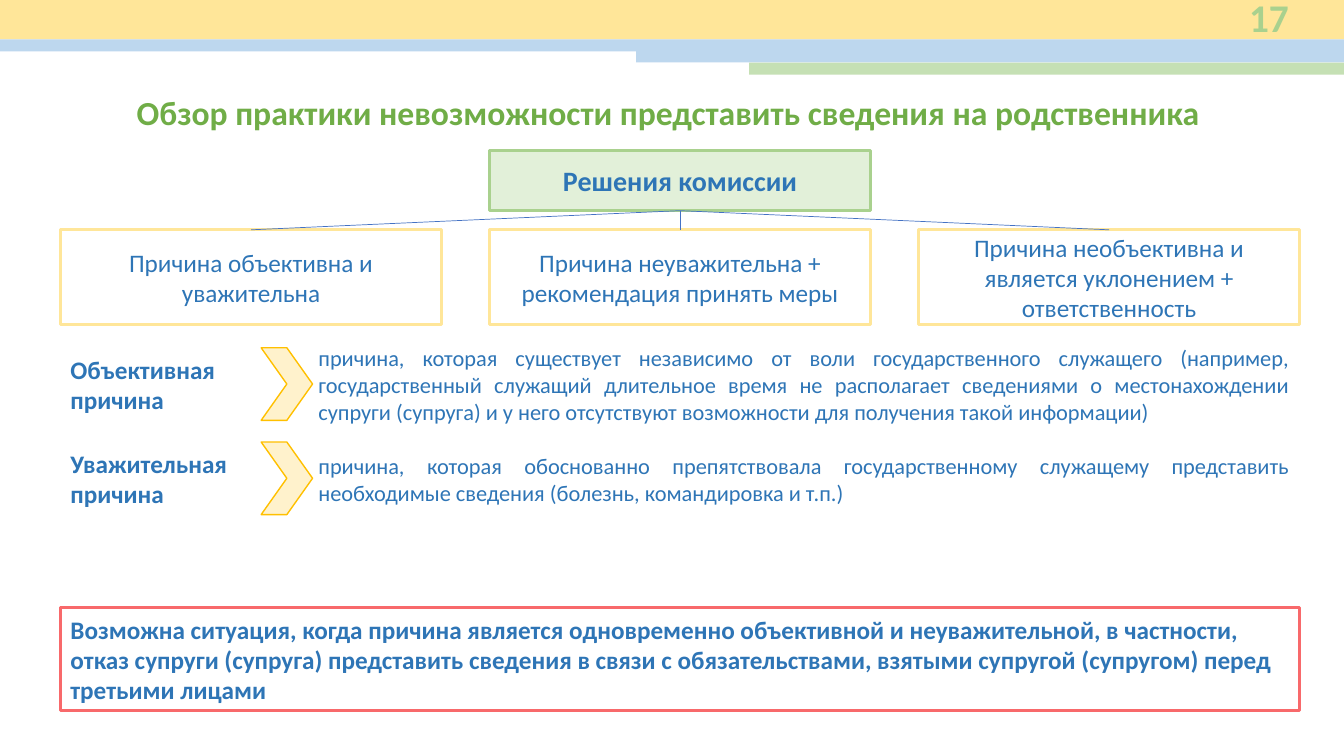
from lxml import etree
from pptx import Presentation
from pptx.dml.color import RGBColor
from pptx.enum.shapes import MSO_CONNECTOR, MSO_SHAPE
from pptx.enum.text import MSO_ANCHOR, PP_ALIGN
from pptx.oxml.ns import qn
from pptx.util import Inches, Pt

RECTANGLE, CHEVRON = MSO_SHAPE.RECTANGLE, MSO_SHAPE.CHEVRON
STRAIGHT = MSO_CONNECTOR.STRAIGHT
LEFT, CENTER, RIGHT, JUSTIFY = PP_ALIGN.LEFT, PP_ALIGN.CENTER, PP_ALIGN.RIGHT, PP_ALIGN.JUSTIFY
TOP, MIDDLE = MSO_ANCHOR.TOP, MSO_ANCHOR.MIDDLE

COLORS = {
    "text": "2E75B6", "title": "70AD47", "number": "A9D18E",
    "yellow": "FFE699", "blue": "BDD7EE", "green": "C5E0B4",
    "pale_green": "E2F0D9", "green_border": "A9D18E", "white": "FFFFFF",
    "pale_yellow": "FFF2CC", "gold": "FFC000", "connector": "4472C4", "red": "F8696B",
}
FONT = "Calibri"
WIDTH, HEIGHT = 13.33, 7.5
MARGIN = 0.6
CONTENT_WIDTH = 12.29
BOX_WIDTH = 3.78
COLUMN_STEP = (CONTENT_WIDTH - BOX_WIDTH) / 2
DEFINITION_TOP, DEFINITION_STEP = 3.38, 0.935
DEFINITION_HEIGHT = 0.87

BANDS = [
    (0, 0, 0.39, "yellow"),
    (0, 0.39, 0.12, "blue"),
    (6.31, 0.5, 0.12, "blue"),
    (7.43, 0.62, 0.12, "green"),
]
DECISIONS = [
    "Причина объективна и уважительна",
    "Причина неуважительна + рекомендация принять меры",
    "Причина необъективна и является уклонением + ответственность",
]
DEFINITIONS = [
    ("Объективная\nпричина",
     "причина, которая существует независимо от воли государственного служащего "
     "(например, государственный служащий длительное время не располагает сведениями "
     "о местонахождении супруги (супруга) и у него отсутствуют возможности для "
     "получения такой информации)"),
    ("Уважительная\nпричина",
     "причина, которая обоснованно препятствовала государственному служащему "
     "представить необходимые сведения (болезнь, командировка и т.п.)"),
]
WARNING = (
    "Возможна ситуация, когда причина является одновременно объективной и "
    "неуважительной, в частности, отказ супруги (супруга) представить сведения "
    "в связи с обязательствами, взятыми супругой (супругом) перед третьими лицами"
)


def color(name):
    """Return the named colour."""
    return RGBColor.from_string(COLORS[name])


def inches(*values):
    """Convert numbers to lengths in inches."""
    return [Inches(value) for value in values]


def write_text(shape, text, size=18, bold=False, align=CENTER, anchor=MIDDLE, ink="text"):
    """Fill a shape with formatted text, one paragraph a line."""
    frame = shape.text_frame
    frame.word_wrap = True
    frame.vertical_anchor = anchor
    frame.text = text
    for paragraph in frame.paragraphs:
        paragraph.alignment = align
        font = paragraph.runs[0].font
        font.name, font.size, font.bold = FONT, Pt(size), bold
        font.color.rgb = color(ink)


def add_text(slide, place, text, **text_format):
    """Add a text box."""
    write_text(slide.shapes.add_textbox(*inches(*place)), text, **text_format)


def add_figure(slide, place, fill=None, border=None, border_width=2.25, kind=RECTANGLE):
    """Add a preset shape with an optional fill and border."""
    shape = slide.shapes.add_shape(kind, *inches(*place))
    shape.shadow.inherit = False
    if fill:
        shape.fill.solid()
        shape.fill.fore_color.rgb = color(fill)
    else:
        shape.fill.background()
    if border:
        shape.line.color.rgb = color(border)
        shape.line.width = Pt(border_width)
    else:
        shape.line.fill.background()
    return shape


def add_link(slide, parent, child):
    """Join the bottom of one box to the top of another."""
    connector = slide.shapes.add_connector(STRAIGHT, 0, 0, 0, 0)
    connector.begin_connect(parent, 2)
    connector.end_connect(child, 0)
    connector.line.color.rgb = color("connector")
    connector.line.width = Pt(0.5)
    etree.SubElement(connector._element.spPr, qn("a:effectLst"))


def add_header(slide):
    """Add the coloured bands, the slide number and the title."""
    for left, top, height, fill in BANDS:
        add_figure(slide, (left, top, WIDTH - left, height), fill)
    add_text(slide, (11.63, -0.05, 1.25, 0.44), "17",
             size=28, bold=True, align=RIGHT, ink="number")
    add_text(slide, (MARGIN, 0.86, 12.13, 0.5),
             "Обзор практики невозможности представить сведения на родственника ",
             size=24, bold=True, anchor=TOP, ink="title")


def add_decision_tree(slide):
    """Add the root box, the three decisions and their links."""
    root = add_figure(slide, (MARGIN + COLUMN_STEP, 1.49, BOX_WIDTH, 0.6),
                      "pale_green", "green_border")
    write_text(root, "Решения комиссии", size=20, bold=True)
    for column, text in enumerate(DECISIONS):
        left = MARGIN + column * COLUMN_STEP
        box = add_figure(slide, (left, 2.28, BOX_WIDTH, 0.94), "white", "yellow")
        write_text(box, text)
        add_link(slide, root, box)


def add_definition(slide, row, term, meaning):
    """Add a term, a chevron and the meaning of the term."""
    top = DEFINITION_TOP + row * DEFINITION_STEP
    add_text(slide, (3.06, top + 0.14, 9.83, 0.59), meaning, size=16, align=JUSTIFY)
    add_text(slide, (MARGIN, top, 2.57, DEFINITION_HEIGHT), term, bold=True, align=LEFT)
    add_figure(slide, (2.59, top + 0.07, 0.51, 0.72), "pale_yellow", "gold", 1, CHEVRON)


def main():
    """Build and save the presentation."""
    presentation = Presentation()
    presentation.slide_width, presentation.slide_height = inches(WIDTH, HEIGHT)
    slide = presentation.slides.add_slide(presentation.slide_layouts[6])
    add_header(slide)
    add_decision_tree(slide)
    for row, (term, meaning) in enumerate(DEFINITIONS):
        add_definition(slide, row, term, meaning)
    warning = add_figure(slide, (MARGIN, 6.03, CONTENT_WIDTH, 1.02), border="red")
    write_text(warning, WARNING, bold=True, align=LEFT)
    presentation.save("out.pptx")


if __name__ == "__main__":
    main()
